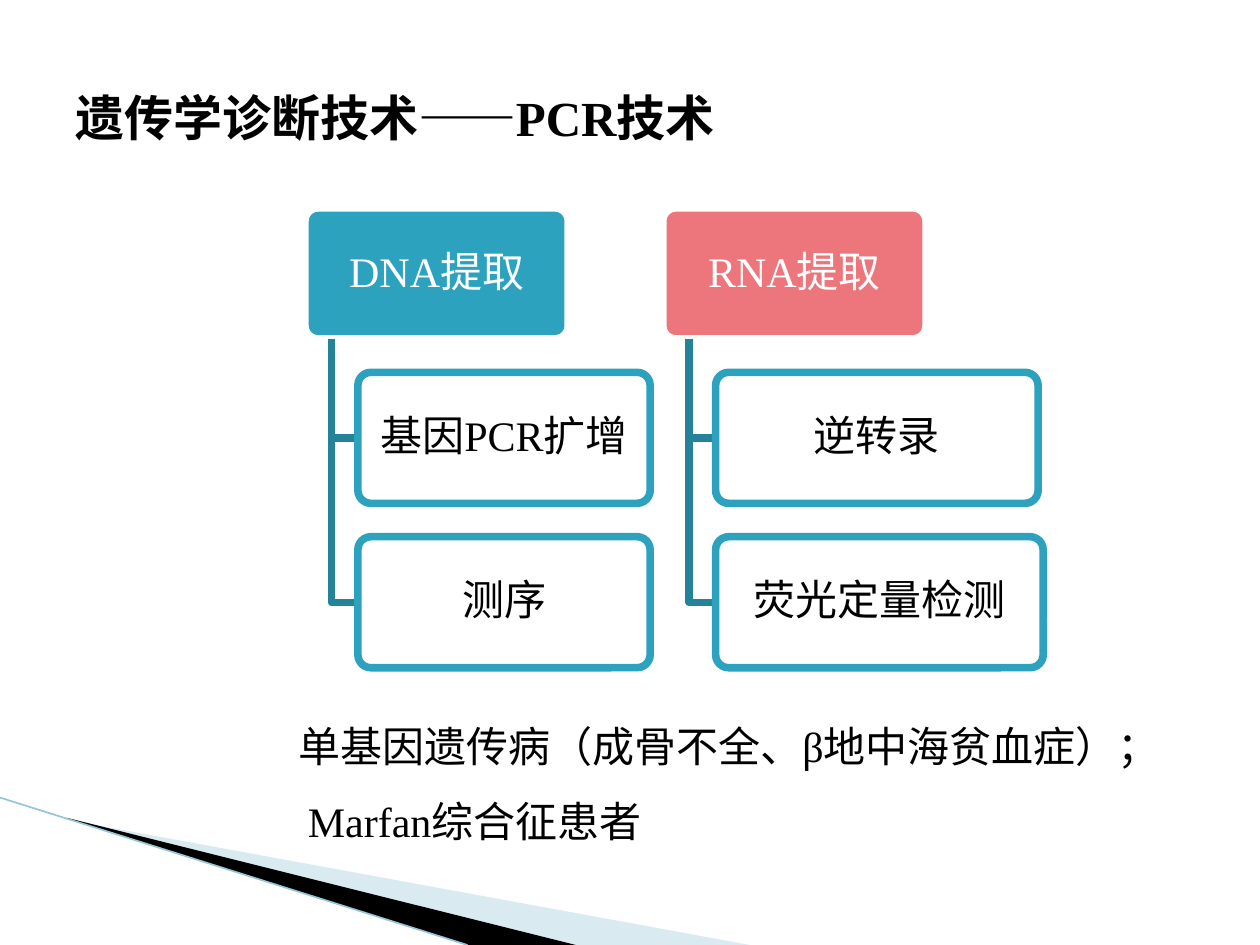
"""Build the slide on PCR techniques for genetic diagnosis."""
from typing import NamedTuple

from lxml.etree import SubElement
from pptx import Presentation
from pptx.dml.color import RGBColor
from pptx.enum.shapes import MSO_CONNECTOR, MSO_SHAPE
from pptx.enum.text import MSO_ANCHOR, PP_ALIGN
from pptx.oxml.ns import qn
from pptx.util import Inches, Pt

W, H = 10, 7.5
COL_X, COL_STEP = 2.42, 2.84
ROW_Y, ROW_STEP = 1.65, 1.305
BOX_W, BOX_H = 2.09, 1.04
STEM, INDENT = 0.21, 0.42
LINE_PT = 4.33
SERIF, MONO = "Times New Roman", "Courier New"
COLORS = {"white": "FFFFFF", "black": "000000", "teal": "2DA2BF", "coral": "EC767C",
          "stem": "248299", "pale": "A0CBDC", "edge": "97C5D8"}


class Step(NamedTuple):
    text: str
    width: float
    font: str


class Branch(NamedTuple):
    head: str
    color: str
    steps: list[Step]


class Wedge(NamedTuple):
    points: list[tuple[float, float]]
    color: str
    alpha: int


BRANCHES = [
    Branch("DNA提取", "teal", [Step("基因PCR扩增", 2.32, SERIF), Step("测序", 2.32, MONO)]),
    Branch("RNA提取", "coral", [Step("逆转录", 2.56, MONO), Step("荧光定量检测", 2.6, MONO)]),
]
WEDGES = [
    Wedge([(0.55, 6.51), (5.95, 7.5), (4.56, 7.5), (0.55, 6.5)], "pale", 40),
    Wedge([(0.53, 6.49), (4.57, 7.5), (3.72, 7.5), (0.54, 6.5)], "black", 100),
]


def rgb(name: str) -> RGBColor:
    """Look up a palette colour."""
    return RGBColor.from_string(COLORS[name])


def fill(s, name: str, alpha: int = 100) -> None:
    """Fill a shape, with opacity in percent."""
    s.fill.solid()
    s.fill.fore_color.rgb = rgb(name)
    if alpha < 100:
        clr = s.fill._xPr.find(qn("a:solidFill"))[0]
        SubElement(clr, qn("a:alpha")).set("val", str(alpha * 1000))


def outline(s, name: str, width: float = LINE_PT) -> None:
    """Set the line colour and width."""
    s.line.color.rgb = rgb(name)
    s.line.width = Pt(width)


def write(tf, text: str, font: dict, para: dict, frame: dict) -> None:
    """Put one formatted run into a text frame."""
    p = tf.paragraphs[0]
    r = p.add_run()
    r.text = text
    r.font.color.rgb = rgb(font["color"])
    formats = {key: value for key, value in font.items() if key != "color"}
    for target, values in ((r.font, formats), (p, para), (tf, {"word_wrap": True, **frame})):
        for key, value in values.items():
            setattr(target, key, value)


def polygon(shapes, points: list[tuple[float, float]], close: bool):
    """Draw a freeform through points given in inches."""
    start, *rest = [(Inches(x), Inches(y)) for x, y in points]
    builder = shapes.build_freeform(*start)
    builder.add_line_segments(rest, close=close)
    s = builder.convert_to_shape()
    s.shadow.inherit = False
    return s


def box(shapes, x: float, y: float, step: Step, colors: tuple[str, str, str], alpha: int) -> None:
    """Draw a rounded box with centred text; colours are fill, line and text."""
    s = shapes.add_shape(MSO_SHAPE.ROUNDED_RECTANGLE, *map(Inches, (x, y, step.width, BOX_H)))
    s.adjustments[0] = 0.1
    s.shadow.inherit = False
    fill(s, colors[0], alpha)
    outline(s, colors[1])
    write(s.text_frame, step.text,
          {"name": step.font, "size": Pt(24), "color": colors[2]},
          {"alignment": PP_ALIGN.CENTER, "line_spacing": 0.9},
          {"vertical_anchor": MSO_ANCHOR.MIDDLE,
           "margin_left": Inches(0.05), "margin_right": Inches(0.05),
           "margin_top": Inches(0.03), "margin_bottom": Inches(0.03)})


def draw_branch(shapes, col: int, branch: Branch) -> None:
    """Draw a head box and the steps hanging below it."""
    x = COL_X + col * COL_STEP
    box(shapes, x, ROW_Y, Step(branch.head, BOX_W, SERIF), (branch.color, "white", "white"), 100)
    for row, step in enumerate(branch.steps, 1):
        y = ROW_Y + row * ROW_STEP
        mid = y + BOX_H / 2
        elbow = polygon(shapes, [(x + STEM, ROW_Y + BOX_H), (x + STEM, mid), (x + INDENT, mid)], False)
        elbow.fill.background()
        outline(elbow, "stem")
        box(shapes, x + INDENT, y, step, ("white", "teal", "black"), 90)


def draw_corner(shapes) -> None:
    """Draw the wedges and the edge line in the lower left corner."""
    for wedge in WEDGES:
        s = polygon(shapes, wedge.points, True)
        fill(s, wedge.color, wedge.alpha)
        s.line.fill.background()
    edge = shapes.add_connector(MSO_CONNECTOR.STRAIGHT, *map(Inches, (0, 0.844 * H, 0.371 * W, H)))
    outline(edge, "edge", 0.95)
    SubElement(edge._element.spPr, qn("a:effectLst"))


def main() -> None:
    """Assemble and save the slide."""
    prs = Presentation()
    prs.slide_width, prs.slide_height = Inches(W), Inches(H)
    shapes = prs.slides.add_slide(prs.slide_layouts[5]).shapes
    draw_corner(shapes)
    title = shapes.title
    title.left, title.top, title.width, title.height = map(
        Inches, (0.05 * W, 0.04 * H, 0.638 * W, 1.25))
    write(title.text_frame, "遗传学诊断技术——PCR技术",
          {"name": SERIF, "size": Pt(28), "bold": True, "color": "black"},
          {"alignment": PP_ALIGN.LEFT}, {"vertical_anchor": MSO_ANCHOR.MIDDLE})
    for col, branch in enumerate(BRANCHES):
        draw_branch(shapes, col, branch)
    note = shapes.add_textbox(*map(Inches, (0.227 * W, 0.729 * H, 0.688 * W, 1.31)))
    write(note.text_frame, "单基因遗传病（成骨不全、β地中海贫血症）； Marfan综合征患者",
          {"name": SERIF, "size": Pt(24), "color": "black"}, {"line_spacing": 1.5}, {})
    prs.save("out.pptx")


if __name__ == "__main__":
    main()
